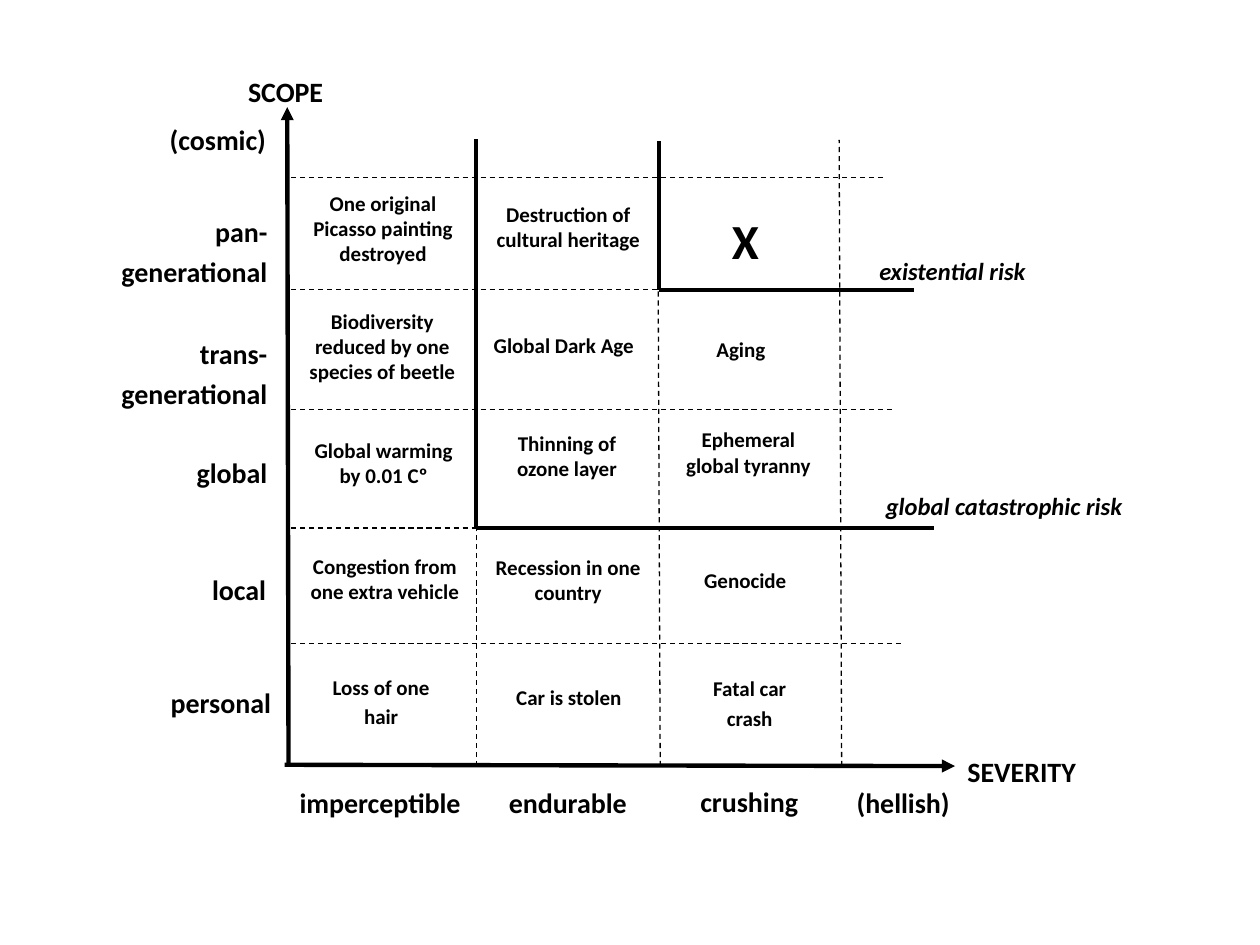
import pptx
import pptx.util
import pptx.dml.color
import pptx.enum.dml
import pptx.enum.shapes
import pptx.enum.text
import pptx.oxml.ns
import lxml.etree

UNIT = 0.1
COLS = [0, 14.9, 29.4, 43.8]
ROWS = [0, 8.9, 18.4, 27.8, 37, 46.7]
BLACK, WHITE = "000000", "FFFFFF"
ALIGN = pptx.enum.text.PP_ALIGN


def span(count):
    return pptx.util.Inches(count * UNIT)


def tint(code):
    return pptx.dml.color.RGBColor.from_string(code)


def write(slide, box, spot, text, size, align=ALIGN.LEFT, space=1.17,
          fill=True, slant=None, inset=None):
    left, top, wide, high = spot
    part = slide.shapes.add_textbox(
        span(box[0] + left), span(box[1] + top), span(wide), span(high))
    if fill:
        part.fill.solid()
        part.fill.fore_color.rgb = tint(WHITE)
    frame = part.text_frame
    frame.word_wrap = True
    if inset is not None:
        frame.margin_left = frame.margin_right = inset
        frame.margin_top = frame.margin_bottom = inset
    line = frame.paragraphs[0]
    line.text = text
    line.alignment = align
    line.line_spacing = space
    font = line.font
    font.name, font.size = "Calibri", pptx.util.Pt(size)
    font.bold, font.italic = True, slant
    font.color.rgb = tint(BLACK)


def rule(slide, box, start, end, width, dash=False, arrow=False):
    x, y = box[:2]
    part = slide.shapes.add_connector(
        pptx.enum.shapes.MSO_CONNECTOR.STRAIGHT,
        span(x + start[0]), span(y + start[1]),
        span(x + end[0]), span(y + end[1]))
    part.line.color.rgb = tint(BLACK)
    part.line.width = pptx.util.Pt(width)
    if dash:
        part.line.dash_style = pptx.enum.dml.MSO_LINE.DASH
    name = pptx.oxml.ns.qn
    if arrow:
        lxml.etree.SubElement(
            part.line._get_or_add_ln(), name("a:tailEnd"), type="triangle")
    lxml.etree.SubElement(part._element.spPr, name("a:effectLst"))


def draw_scope(slide, box):
    write(slide, box, (14.4, 0, 11.8, 3.9), "SCOPE", 16)
    for text, *spot in [
        ("(cosmic)", 4, 3.8, 13.8, 4.8),
        ("pan-generational", 0.8, 11.1, 17.1, 6.1),
        ("trans-generational", 0, 20.8, 17.9, 6.6),
        ("global", 6.8, 30.2, 11.1, 5.1),
        ("local", 6.6, 39.5, 11.2, 4.3),
        ("personal", 5.6, 48.5, 12.6, 4.4),
    ]:
        write(slide, box, spot, text, 16, ALIGN.RIGHT)


def draw_severity(slide, box):
    for text, *spot in [
        ("imperceptible", 0, 2.5, 17.4, 4.2),
        ("endurable", 16.6, 2.5, 15.3, 3.7),
        ("crushing", 31.8, 2.4, 13.1, 3.7),
        ("(hellish)", 44.2, 2.5, 13.9, 4.2),
        ("SEVERITY", 53, 0, 14.4, 4.2),
    ]:
        write(slide, box, spot, text, 16)


def draw_cells(slide, box):
    cells = [
        [("One original Picasso painting destroyed", 1, 0.6, 0.5, 13.8, 7.4),
         ("Destruction of cultural heritage", 1, 0.4, 1.4, 13.8, 6.6),
         ("X", 1.17, 4.8, 1.3, 7.3, 5.8)],
        [("Biodiversity reduced by one species of beetle",
          1, 0.3, 1, 14.3, 7.9),
         ("Global Dark Age", 1, 0, 2.9, 13.9, 5.8),
         ("Aging", 1.17, 1.8, 2.9, 9.4, 3.9)],
        [("Global warming by 0.01 Cº", 1, 0.8, 1.7, 13.5, 7.5),
         ("Thinning of ozone layer", 1, 0.3, 1.2, 13.8, 7.4),
         ("Ephemeral global tyranny", 1, 0.2, 0.9, 13.8, 7.4)],
        [("Congestion from one extra vehicle", 1, 0.3, 1.5, 14.7, 7.5),
         ("Recession in one country", 1, 0.3, 1.6, 14, 6.1),
         ("Genocide", 1.17, 1.1, 2.3, 11.5, 4.6)],
        [("Loss of one hair", 1.17, 1.8, 1.6, 11.1, 5.3),
         ("Car is stolen", 1.17, 0.3, 2.4, 14.1, 4.6),
         ("Fatal car crash", 1.17, 1.8, 1.7, 10.8, 5.9)],
    ]
    for row, band in enumerate(cells):
        for col, (text, space, *spot) in enumerate(band):
            cell = (box[0] + COLS[col], box[1] + ROWS[row])
            mark = text == "X"
            write(slide, cell, spot, text, 28 if mark else 12,
                  ALIGN.LEFT if mark else ALIGN.CENTER, space,
                  fill=row > 2 or (col == 0 and row > 0))


def draw_risks(slide, box):
    write(slide, box, (45.9, 5.3, 19.2, 3.7), "existential risk", 14,
          slant=True)
    write(slide, box, (47.4, 24.5, 19.2, 5), "global catastrophic risk", 14,
          slant=True, inset=0)


def draw_lines(slide, box):
    base = ROWS[-1]
    for y, end in zip(ROWS, [47.4, 47.9, 47.9, 49.6, 48.7]):
        rule(slide, box, (0.2, y), (end, y), 0.75, dash=True)
    for x, lean, top in zip(COLS[1:], [0, 0.2, 0.2], [-0.9, -0.9, -3]):
        rule(slide, box, (x + lean / 2, base), (x - lean / 2, top), 0.75,
             dash=True)
    for col, row, end, top, tall, flat in [
        (1, 3, 51.2, -3.1, 2.25, 2.25),
        (2, 1, 49.6, -2.9, 2.75, 2.5),
    ]:
        x, y = COLS[col], ROWS[row]
        rule(slide, box, (x, y), (x, top), tall)
        rule(slide, box, (x, y), (end, y), flat)
    rule(slide, box, (0, base), (-0.1, -5.6), 2.5, arrow=True)
    rule(slide, box, (-0.3, base - 0.1), (52.9, base), 2.5, arrow=True)


def main():
    deck = pptx.Presentation()
    deck.slide_width, deck.slide_height = span(100), span(75)
    slide = deck.slides.add_slide(deck.slide_layouts[6])
    plot = (22.9, 14.1)
    draw_scope(slide, (4.3, 5))
    draw_severity(slide, (22.8, 58.9))
    draw_cells(slide, plot)
    draw_risks(slide, plot)
    draw_lines(slide, plot)
    deck.save("out.pptx")


if __name__ == "__main__":
    main()
